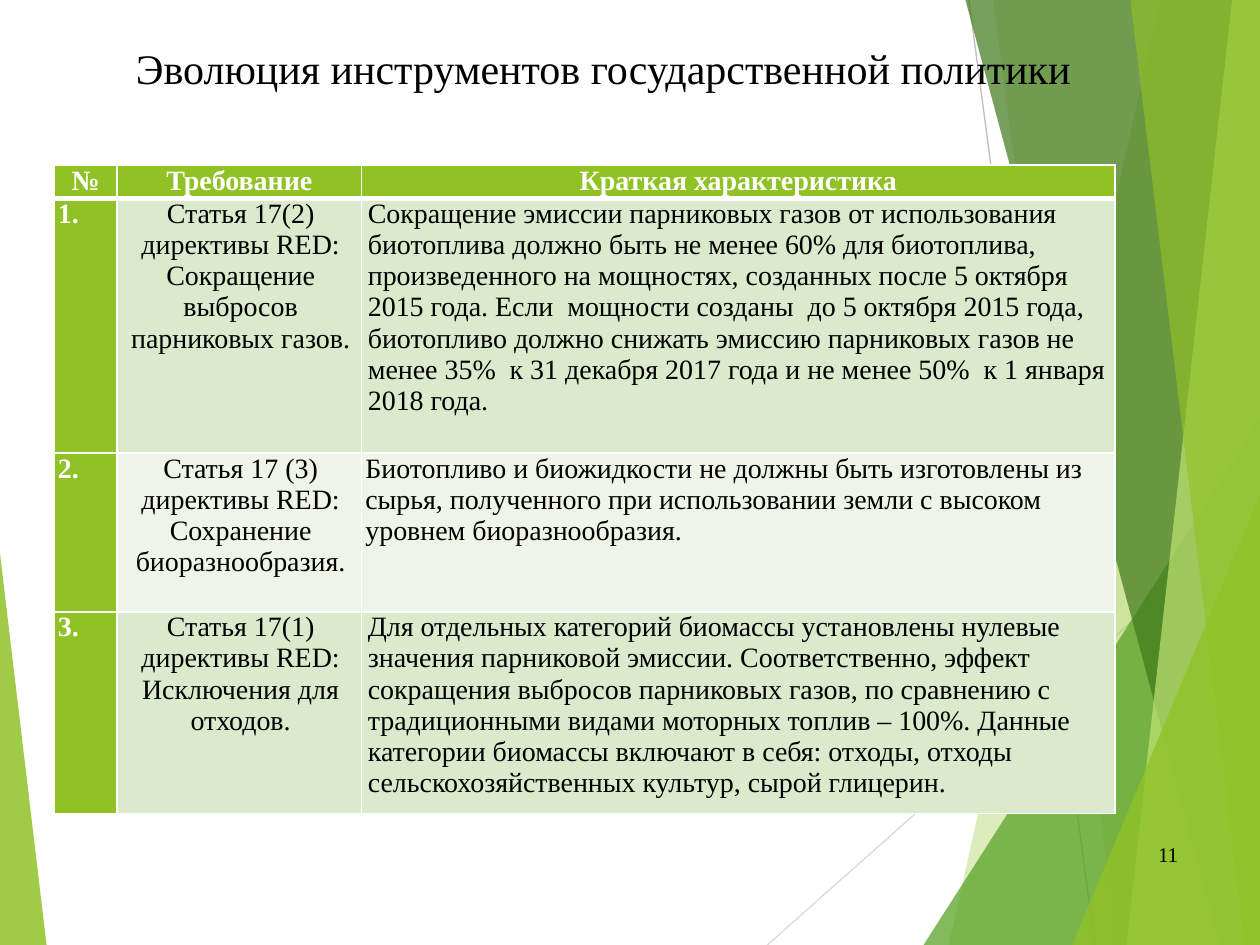
from lxml.etree import SubElement
from pptx import Presentation
from pptx.dml.color import RGBColor
from pptx.enum.shapes import MSO_CONNECTOR as CONN, MSO_SHAPE as SHAPE
from pptx.enum.text import MSO_ANCHOR as ANCHOR, PP_ALIGN as ALIGN
from pptx.oxml.ns import qn
from pptx.util import Inches, Pt

COLORS = {
    "black": "000000", "white": "FFFFFF", "gray": "BFBFBF", "pale_gray": "D9D9D9",
    "green": "90C226", "leaf": "54A021", "forest": "3F7819", "lime": "C0E474",
    "band": "DBE9CD", "band_light": "EEF4E8",
}
TOP, BOTTOM, RIGHT = -0.01, 7.5, 10


def rgb(name):
    return RGBColor.from_string(COLORS[name])


class SlideBuilder:
    font = "Times New Roman"

    def __init__(self, slide):
        self.s = slide

    def line(self, start, end, color):
        points = [Inches(v) for v in (*start, *end)]
        sp = self.s.shapes.add_connector(CONN.STRAIGHT, *points)
        sp.line.color.rgb = rgb(color)
        sp.line.width = Pt(0.75)
        SubElement(sp._element.spPr, qn("a:effectLst"))

    def paint(self, sp, color, opacity):
        sp.shadow.inherit = False
        sp.fill.solid()
        sp.fill.fore_color.rgb = rgb(color)
        sp.line.fill.background()
        clr = sp._element.spPr.find(qn("a:solidFill"))[0]
        SubElement(clr, qn("a:alpha")).set("val", str(opacity * 1000))

    def ribbon(self, top_x, bottom_x, color, opacity):
        corners = [(RIGHT, TOP), (RIGHT, BOTTOM), (bottom_x, BOTTOM)]
        fb = self.s.shapes.build_freeform(Inches(top_x), Inches(TOP))
        fb.add_line_segments([(Inches(x), Inches(y)) for x, y in corners])
        self.paint(fb.convert_to_shape(), color, opacity)

    def triangle(self, box, apex, color, opacity):
        sp = self.s.shapes.add_shape(SHAPE.ISOSCELES_TRIANGLE, *map(Inches, box))
        sp.adjustments[0] = apex
        self.paint(sp, color, opacity)

    def paragraph(self, tf, text, size, color="black", bold=False, align=ALIGN.LEFT):
        p = tf.paragraphs[0]
        p.alignment = align
        r = p.add_run()
        r.text = text
        style = {"name": self.font, "size": Pt(size), "bold": bold}
        for key, value in style.items():
            setattr(r.font, key, value)
        r.font.color.rgb = rgb(color)
        return p

    def text(self, box, text, size, align=ALIGN.LEFT, anchor=ANCHOR.TOP):
        tf = self.s.shapes.add_textbox(*map(Inches, box)).text_frame
        tf.word_wrap = True
        tf.vertical_anchor = anchor
        self.paragraph(tf, text, size, align=align)

    def borders(self, cell, bottom):
        tcPr = cell._tc.get_or_add_tcPr()
        widths = {"a:lnL": 1, "a:lnR": 1, "a:lnT": 1, "a:lnB": bottom}
        for i, (tag, width) in enumerate(widths.items()):
            ln = SubElement(tcPr, qn(tag), w=str(Pt(width)))
            fill = SubElement(ln, qn("a:solidFill"))
            SubElement(fill, qn("a:srgbClr"), val=COLORS["white"])
            tcPr.insert(i, ln)

    def cell(self, cell, text, fill, inset, indent, bottom, **style):
        margins = {"margin_left": inset, "margin_right": inset,
                   "margin_top": 0, "margin_bottom": 0}
        for key, value in margins.items():
            setattr(cell, key, Inches(value))
        cell.fill.solid()
        cell.fill.fore_color.rgb = rgb(fill)
        self.borders(cell, bottom)
        p = self.paragraph(cell.text_frame, text, 16, **style)
        if indent:
            p._p.get_or_add_pPr().set("marL", str(Inches(indent)))

    def table(self, left, top, widths, heights, rows):
        box = map(Inches, (left, top, sum(widths), sum(heights)))
        tbl = self.s.shapes.add_table(len(rows), len(widths), *box).table
        for col, width in zip(tbl.columns, widths):
            col.width = Inches(width)
        for row, height in zip(tbl.rows, heights):
            row.height = Inches(height)
        for i, row in enumerate(rows):
            for j, text in enumerate(row):
                head = i == 0 or j == 0
                band = "band" if i % 2 else "band_light"
                self.cell(
                    tbl.cell(i, j), text,
                    fill="green" if head else band,
                    inset=0.05 if i == 3 and j else 0.03,
                    indent=0.02 if not head and (j == 1 or i == 1) else 0,
                    bottom=3 if i == 0 else 1,
                    color="white" if head else "black",
                    bold=head,
                    align=ALIGN.CENTER if i == 0 or j == 1 else ALIGN.LEFT,
                )


ROWS = [
    ("№", "Требование", "Краткая характеристика"),
    ("1.", "Статья 17(2) директивы RED: Сокращение выбросов парниковых газов.",
     "Сокращение эмиссии парниковых газов от использования биотоплива должно быть "
     "не менее 60% для биотоплива, произведенного на мощностях, созданных после "
     "5 октября 2015 года. Если  мощности созданы  до 5 октября 2015 года, "
     "биотопливо должно снижать эмиссию парниковых газов не менее 35%  к 31 декабря "
     "2017 года и не менее 50%  к 1 января 2018 года."),
    ("2.", "Статья 17 (3) директивы RED: Сохранение биоразнообразия.",
     "Биотопливо и биожидкости не должны быть изготовлены из сырья, полученного "
     "при использовании земли с высоком уровнем биоразнообразия."),
    ("3.", "Статья 17(1) директивы RED: Исключения для отходов.",
     "Для отдельных категорий биомассы установлены нулевые значения парниковой "
     "эмиссии. Соответственно, эффект сокращения выбросов парниковых газов, по "
     "сравнению с традиционными видами моторных топлив – 100%. Данные категории "
     "биомассы включают в себя: отходы, отходы сельскохозяйственных культур, "
     "сырой глицерин."),
]


def main():
    prs = Presentation()
    prs.slide_width, prs.slide_height = Inches(10), Inches(7.5)
    b = SlideBuilder(prs.slides.add_slide(prs.slide_layouts[6]))

    b.line((7.69, 0), (8.69, 7.5), "gray")
    b.line((10, 4.03), (6.09, 7.5), "pale_gray")
    b.ribbon(9.21, 7.53, "green", 30)
    b.ribbon(7.88, 8.87, "green", 20)
    b.triangle((7.33, 3.33, 2.67, 4.17), 1, "leaf", 72)
    b.ribbon(7.66, 9.68, "forest", 70)
    b.ribbon(9.78, 8.94, "lime", 70)
    b.ribbon(8.97, 9.88, "green", 65)
    b.triangle((8.51, 3.93, 1.49, 3.57), 1, "green", 80)
    b.triangle((0, 4.39, 0.37, 3.11), 0, "green", 85)

    b.text((8.89, 6.58, 0.56, 0.4), "11", 12, ALIGN.RIGHT, ANCHOR.MIDDLE)
    b.text((0.98, 0.29, 8.19, 0.5),
           "Эволюция инструментов государственной политики", 24)
    b.table(0.43, 1.31, (0.5, 1.94, 5.98), (0.25, 2.02, 1.26, 1.6), ROWS)
    prs.save("out.pptx")


if __name__ == "__main__":
    main()
